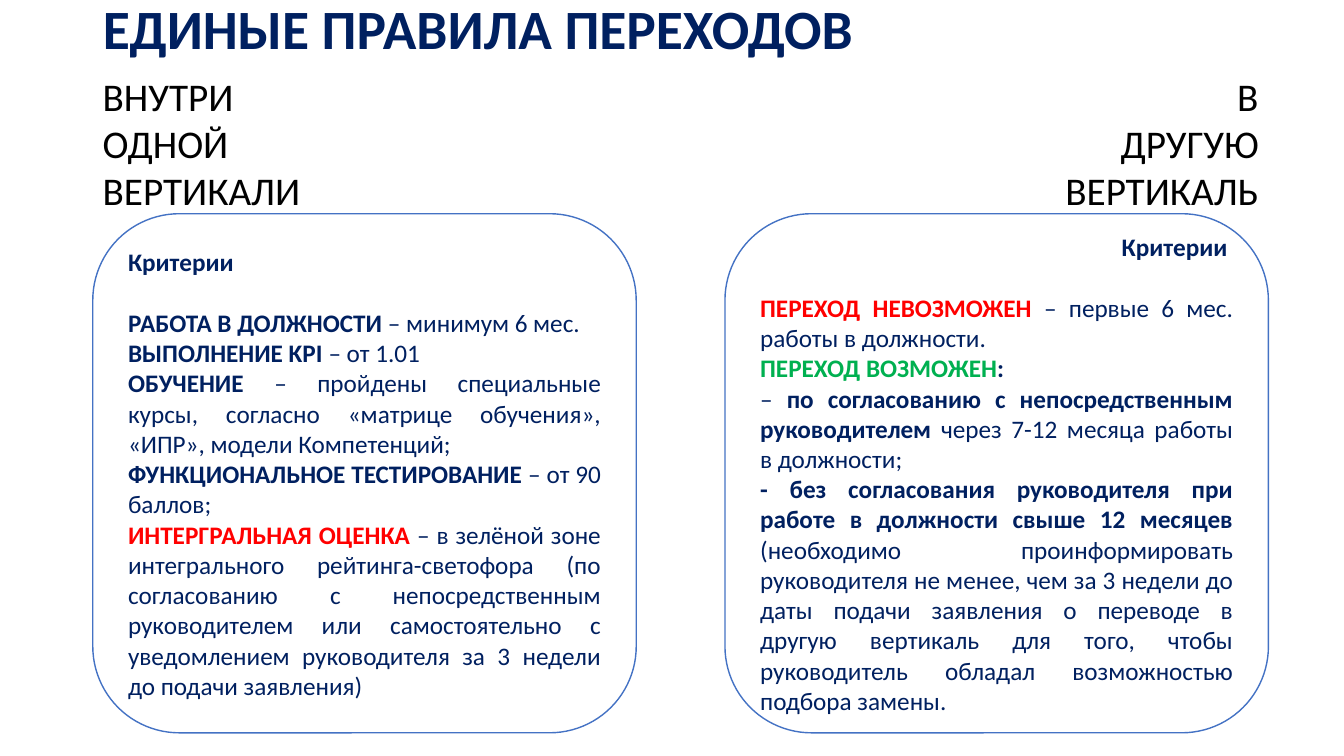
from pptx import Presentation
from pptx.dml.color import RGBColor
from pptx.enum.shapes import MSO_SHAPE
from pptx.enum.text import MSO_ANCHOR, PP_ALIGN
from pptx.util import Inches, Pt

COLORS = {"navy": "002060", "black": "000000", "red": "FF0000",
          "green": "00B050", "white": "FFFFFF", "blue": "4472C4"}
LEFT, RIGHT, FULL = PP_ALIGN.LEFT, PP_ALIGN.RIGHT, PP_ALIGN.JUSTIFY
EDGE, TOP = 0.92, 2.12
WIDE, HIGH = 5.39, 5.15
STEP = 6.27

INNER = [
    [("РАБОТА В ДОЛЖНОСТИ ", "navy", True), ("– минимум 6 мес.", "navy", False)],
    [("ВЫПОЛНЕНИЕ KPI ", "navy", True), ("– от 1.01", "navy", False)],
    [("ОБУЧЕНИЕ", "navy", True),
     (" – пройдены специальные курсы, согласно «матрице обучения», "
      "«ИПР», модели Компетенций;", "navy", False)],
    [("ФУНКЦИОНАЛЬНОЕ ТЕСТИРОВАНИЕ ", "navy", True),
     ("– от 90 баллов;", "navy", False)],
    [("ИНТЕРГРАЛЬНАЯ ОЦЕНКА ", "red", True),
     ("– в зелёной зоне интегрального рейтинга-светофора (по согласованию "
      "с непосредственным руководителем или самостоятельно с уведомлением "
      "руководителя за 3 недели до подачи заявления)", "navy", False)],
]
OUTER = [
    [("ПЕРЕХОД НЕВОЗМОЖЕН ", "red", True),
     ("– первые 6 мес. работы в должности.", "navy", False)],
    [("ПЕРЕХОД ВОЗМОЖЕН", "green", True), (":", "navy", True)],
    [("– ", "navy", False),
     ("по согласованию с непосредственным руководителем ", "navy", True),
     ("через 7-12 месяца работы в должности;", "navy", False)],
    [("- без согласования руководителя при работе в должности "
      "свыше 12 месяцев ", "navy", True),
     ("(необходимо проинформировать руководителя не менее, чем за 3 недели "
      "до даты подачи заявления о переводе в другую вертикаль для того, чтобы "
      "руководитель обладал возможностью подбора замены.", "navy", False)],
]


def paint(name):
    return RGBColor.from_string(COLORS[name])


def apply(item, form):
    for key, value in form.items():
        setattr(item, key, value)


def place(shape, left, top, width, height):
    apply(shape, {"left": Inches(left), "top": Inches(top),
                  "width": Inches(width), "height": Inches(height)})


def write(frame, rows, size, aligns):
    frame.word_wrap = True
    for index, (row, align) in enumerate(zip(rows, aligns)):
        para = frame.paragraphs[0] if index == 0 else frame.add_paragraph()
        para.alignment = align
        for text, color, bold in row:
            run = para.add_run()
            run.text = text
            apply(run.font, {"name": "Calibri", "size": Pt(size), "bold": bold})
            run.font.color.rgb = paint(color)


def add_title(slide, text):
    title = slide.shapes.title
    place(title, EDGE, 0, 11.5, 0.62)
    frame = title.text_frame
    frame.vertical_anchor = MSO_ANCHOR.MIDDLE
    write(frame, [[(text, "navy", True)]], 39.6, [LEFT])
    frame.paragraphs[0].line_spacing = 0.9


def add_label(slide, left, lines, align):
    box = slide.shapes.add_textbox(Inches(left), Inches(0.67),
                                   Inches(3.19), Inches(1.59))
    rows = [[(line, "black", False)] for line in lines]
    write(box.text_frame, rows, 28, [align] * len(rows))


def add_card(slide, left, rows, align):
    card = slide.shapes.add_shape(MSO_SHAPE.ROUNDED_RECTANGLE, Inches(left),
                                  Inches(TOP), Inches(WIDE), Inches(HIGH))
    card.shadow.inherit = False
    card.fill.solid()
    card.fill.fore_color.rgb = paint("white")
    card.line.color.rgb = paint("blue")
    card.line.width = Pt(1)
    frame = card.text_frame
    frame.vertical_anchor = MSO_ANCHOR.MIDDLE
    head = [("Критерии ", "navy", True)]
    write(frame, [head] + rows, 18, [align] + [FULL] * len(rows))
    frame.paragraphs[0].space_after = Pt(22)


def main():
    deck = Presentation()
    apply(deck, {"slide_width": Inches(13.33), "slide_height": Inches(7.5)})
    slide = deck.slides.add_slide(deck.slide_layouts[5])
    add_title(slide, "ЕДИНЫЕ ПРАВИЛА ПЕРЕХОДОВ")
    add_label(slide, EDGE, ["ВНУТРИ", "ОДНОЙ ВЕРТИКАЛИ"], LEFT)
    add_card(slide, EDGE, INNER, FULL)
    add_label(slide, 9.39, ["В", "ДРУГУЮ", "ВЕРТИКАЛЬ"], RIGHT)
    add_card(slide, EDGE + STEP, OUTER, RIGHT)
    deck.save("out.pptx")


if __name__ == "__main__":
    main()
